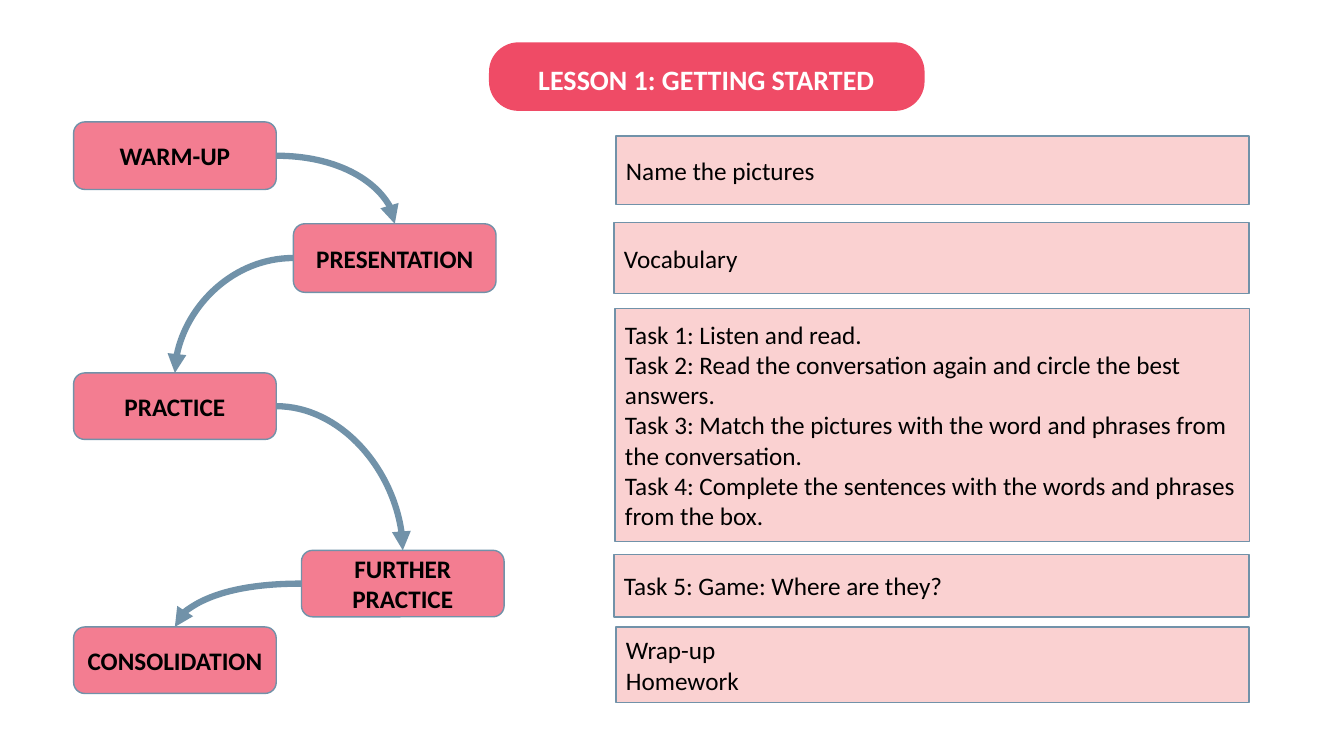
from pptx import Presentation
from pptx.dml.color import RGBColor
from pptx.enum import shapes, text
from pptx.oxml.ns import qn
from pptx.oxml.xmlchemy import OxmlElement
from pptx.util import Inches, Pt

TITLE = "LESSON 1: GETTING STARTED"
# label, left, top, height
STAGES = [
    ("WARM-UP", 0.73, 1.21, 0.67),
    ("PRESENTATION", 2.91, 2.22, 0.68),
    ("PRACTICE", 0.73, 3.7, 0.66),
    ("FURTHER PRACTICE", 2.99, 5.46, 0.66),
    ("CONSOLIDATION", 0.73, 6.22, 0.66),
]
STAGE_WIDTH = 2.01
# lines, left, top, height
ACTIVITIES = [
    (["Name the pictures"], 6.11, 1.35, 0.68),
    (["Vocabulary"], 6.09, 2.21, 0.7),
    (["Task 1: Listen and read.",
      "Task 2: Read the conversation again and circle the best answers.",
      "Task 3: Match the pictures with the word and phrases from the conversation.",
      "Task 4: Complete the sentences with the words and phrases from the box."],
     6.1, 3.06, 2.31),
    (["Task 5: Game: Where are they?"], 6.09, 5.5, 0.62),
    (["Wrap-up", "Homework"], 6.11, 6.22, 0.75),
]
ACTIVITY_RIGHT = 12.39

RED = RGBColor(0xEF, 0x4B, 0x66)
PINK = RGBColor(0xF3, 0x7D, 0x91)
PALE = RGBColor(0xF7, 0xA5, 0xA5)
BLUE = RGBColor(0x71, 0x92, 0xA9)
BLACK = RGBColor(0, 0, 0)
WHITE = RGBColor(0xFF, 0xFF, 0xFF)
RECT = shapes.MSO_SHAPE.RECTANGLE
ROUND = shapes.MSO_SHAPE.ROUNDED_RECTANGLE
TOP, LEFT, RIGHT = 0, 1, 3


def add_box(slide, kind, box, fill, line=None):
    sp = slide.shapes.add_shape(kind, *map(Inches, box))
    sp.shadow.inherit = False
    sp.fill.solid()
    sp.fill.fore_color.rgb = fill
    if line is None:
        sp.line.fill.background()
    else:
        sp.line.color.rgb = line
        sp.line.width = Pt(1)
    return sp


def write(sp, lines, size=18, color=BLACK, bold=False, align=text.PP_ALIGN.LEFT):
    tf = sp.text_frame
    tf.word_wrap = True
    tf.text = "\n".join(lines)
    for p in tf.paragraphs:
        p.alignment = align
        p.font.name = "Calibri"
        p.font.size = Pt(size)
        p.font.bold = bold
        p.font.color.rgb = color


def set_half_transparent(sp):
    alpha = OxmlElement("a:alpha")
    alpha.set("val", "50000")
    sp._element.spPr.find(qn("a:solidFill"))[0].append(alpha)


def add_curved_arrow(slide, start, end):
    """Curve from the facing side of one stage to the top of the next."""
    rightward = end.left > start.left
    conn = slide.shapes.add_connector(
        shapes.MSO_CONNECTOR.CURVE,
        start.left + (start.width if rightward else 0),
        start.top + start.height // 2,
        end.left + end.width // 2, end.top)
    conn.begin_connect(start, RIGHT if rightward else LEFT)
    conn.end_connect(end, TOP)
    conn.line.color.rgb = BLUE
    conn.line.width = Pt(4.5)
    sp_pr = conn._element.spPr
    sp_pr.find(qn("a:prstGeom")).set("prst", "curvedConnector2")
    tail = OxmlElement("a:tailEnd")
    tail.set("type", "triangle")
    sp_pr.find(qn("a:ln")).append(tail)
    sp_pr.append(OxmlElement("a:effectLst"))


def main():
    prs = Presentation()
    prs.slide_width, prs.slide_height = Inches(13.33), Inches(7.5)
    s = prs.slides.add_slide(prs.slide_layouts[6])

    banner = add_box(s, ROUND, (4.85, 0.42, 4.32, 0.68), RED)
    banner.adjustments[0] = 0.43
    title = s.shapes.add_textbox(*map(Inches, (5.24, 0.57, 3.93, 0.44)))
    write(title, [TITLE], size=20, color=WHITE, bold=True)

    stages = []
    for label, left, top, height in STAGES:
        sp = add_box(s, ROUND, (left, top, STAGE_WIDTH, height), PINK, BLUE)
        write(sp, [label], bold=True, align=text.PP_ALIGN.CENTER)
        stages.append(sp)
    for start, end in zip(stages, stages[1:]):
        add_curved_arrow(s, start, end)

    for lines, left, top, height in ACTIVITIES:
        sp = add_box(s, RECT, (left, top, ACTIVITY_RIGHT - left, height), PALE, BLUE)
        set_half_transparent(sp)
        write(sp, lines)

    prs.save("out.pptx")


if __name__ == "__main__":
    main()
